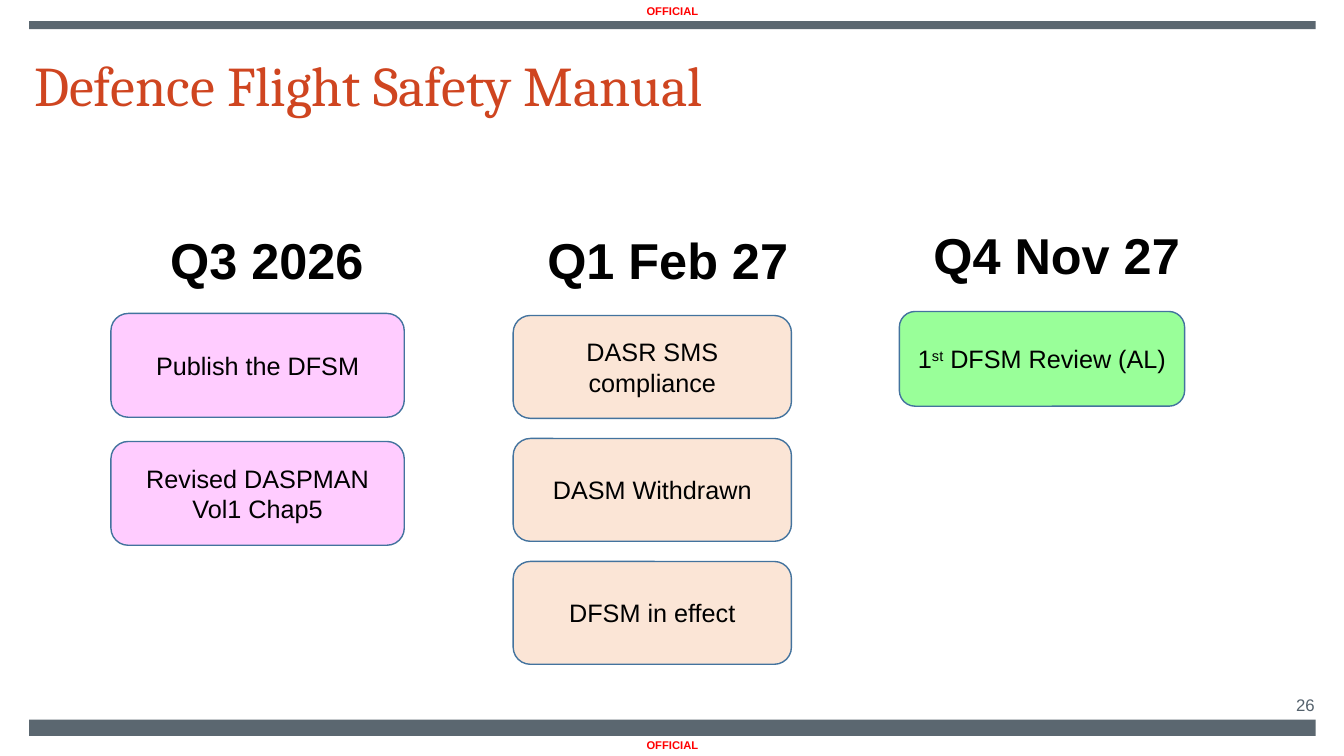
from pptx import Presentation
from pptx.dml.color import RGBColor
from pptx.enum.shapes import MSO_SHAPE as Shape
from pptx.enum.text import MSO_ANCHOR as Anchor, MSO_AUTO_SIZE as AutoSize, PP_ALIGN as Align
from pptx.util import Inches, Pt

SLATE = RGBColor(0x5B, 0x67, 0x70)
NUMBER_GREY = RGBColor(0x54, 0x61, 0x6C)
RED = RGBColor(0xFF, 0x00, 0x00)
RUST = RGBColor(0xCF, 0x45, 0x20)
BLACK = RGBColor(0x00, 0x00, 0x00)
OUTLINE = RGBColor(0x43, 0x73, 0x9E)
PINK = RGBColor(0xFF, 0xCC, 0xFF)
PEACH = RGBColor(0xFB, 0xE5, 0xD6)
GREEN = RGBColor(0x99, 0xFF, 0x99)

MARGIN, BAND_WIDTH = 0.29, 12.76


def style(frame, size, color, font="Arial", bold=False, align=Align.LEFT,
          anchor=Anchor.TOP, inset=None, wrap=True):
    frame.word_wrap = wrap
    frame.vertical_anchor = anchor
    if inset is not None:
        frame.margin_left = frame.margin_right = Inches(inset)
        frame.margin_top = frame.margin_bottom = Inches(inset)
    paragraph = frame.paragraphs[0]
    paragraph.alignment = align
    paragraph.font.size = Pt(size)
    paragraph.font.name = font
    paragraph.font.bold = bold
    paragraph.font.color.rgb = color


def add_box(kind, left, top, width, height, fill):
    box = slide.shapes.add_shape(
        kind, Inches(left), Inches(top), Inches(width), Inches(height))
    box.shadow.inherit = False
    box.fill.solid()
    box.fill.fore_color.rgb = fill
    box.line.fill.background()
    return box


prs = Presentation()
prs.slide_width, prs.slide_height = Inches(13.33), Inches(7.5)
slide = prs.slides.add_slide(prs.slide_layouts[5])

for band_top, band_height, marking_top in [(0.21, 0.08, 0), (7.14, 0.16, 7.29)]:
    add_box(Shape.RECTANGLE, MARGIN, band_top, BAND_WIDTH, band_height, SLATE)
    marking = slide.shapes.add_textbox(
        Inches(MARGIN), Inches(marking_top), Inches(BAND_WIDTH), Inches(0.21))
    marking.text_frame.text = "OFFICIAL"
    style(marking.text_frame, 8, RED, bold=True, align=Align.CENTER,
          anchor=Anchor.MIDDLE, inset=0.08)

title = slide.shapes.title
title.left, title.top = Inches(0.34), Inches(0.58)
title.width, title.height = Inches(9.77), Inches(0.57)
title.text_frame.text = "Defence Flight Safety Manual"
title.text_frame.auto_size = AutoSize.NONE
style(title.text_frame, 40, RUST, font="Cambria", inset=0)
title.text_frame.paragraphs[0].line_spacing = 0.9

page_number = slide.shapes.add_textbox(
    Inches(12.18), Inches(6.9), Inches(0.86), Inches(0.19))
page_number.text_frame.text = "26"
style(page_number.text_frame, 12, NUMBER_GREY, align=Align.RIGHT,
      anchor=Anchor.BOTTOM, inset=0)

quarters = [
    ("Q3 2026", 1.59, 2.22, 2.14, PINK, 1.1, 3.11, 2.91, 1.03, 1.27,
     [["Publish the DFSM"], ["Revised DASPMAN Vol1 Chap5"]]),
    ("Q1 Feb 27", 5.33, 2.22, 2.61, PEACH, 5.09, 3.13, 2.76, 1.02, 1.22,
     [["DASR SMS compliance"], ["DASM Withdrawn"], ["DFSM in effect"]]),
    ("Q4 Nov 27", 9.16, 2.17, 2.67, GREEN, 8.92, 3.09, 2.83, 0.94, 1.22,
     [["1", "st", " DFSM Review (AL)"]]),
]

for (quarter, heading_left, heading_top, heading_width, fill,
     left, top, width, height, step, milestones) in quarters:
    heading = slide.shapes.add_textbox(
        Inches(heading_left), Inches(heading_top), Inches(heading_width), Inches(0.71))
    heading.text_frame.text = quarter
    style(heading.text_frame, 36, BLACK, bold=True, wrap=False)

    for row, parts in enumerate(milestones):
        milestone = add_box(
            Shape.ROUNDED_RECTANGLE, left, top + row * step, width, height, fill)
        milestone.line.color.rgb = OUTLINE
        milestone.line.width = Pt(1)
        for part in parts:
            run = milestone.text_frame.paragraphs[0].add_run()
            run.text = part
            if part == "st":
                run._r.get_or_add_rPr().set("baseline", "30000")
        style(milestone.text_frame, 18, BLACK, align=Align.CENTER, anchor=Anchor.MIDDLE)

prs.save("out.pptx")
